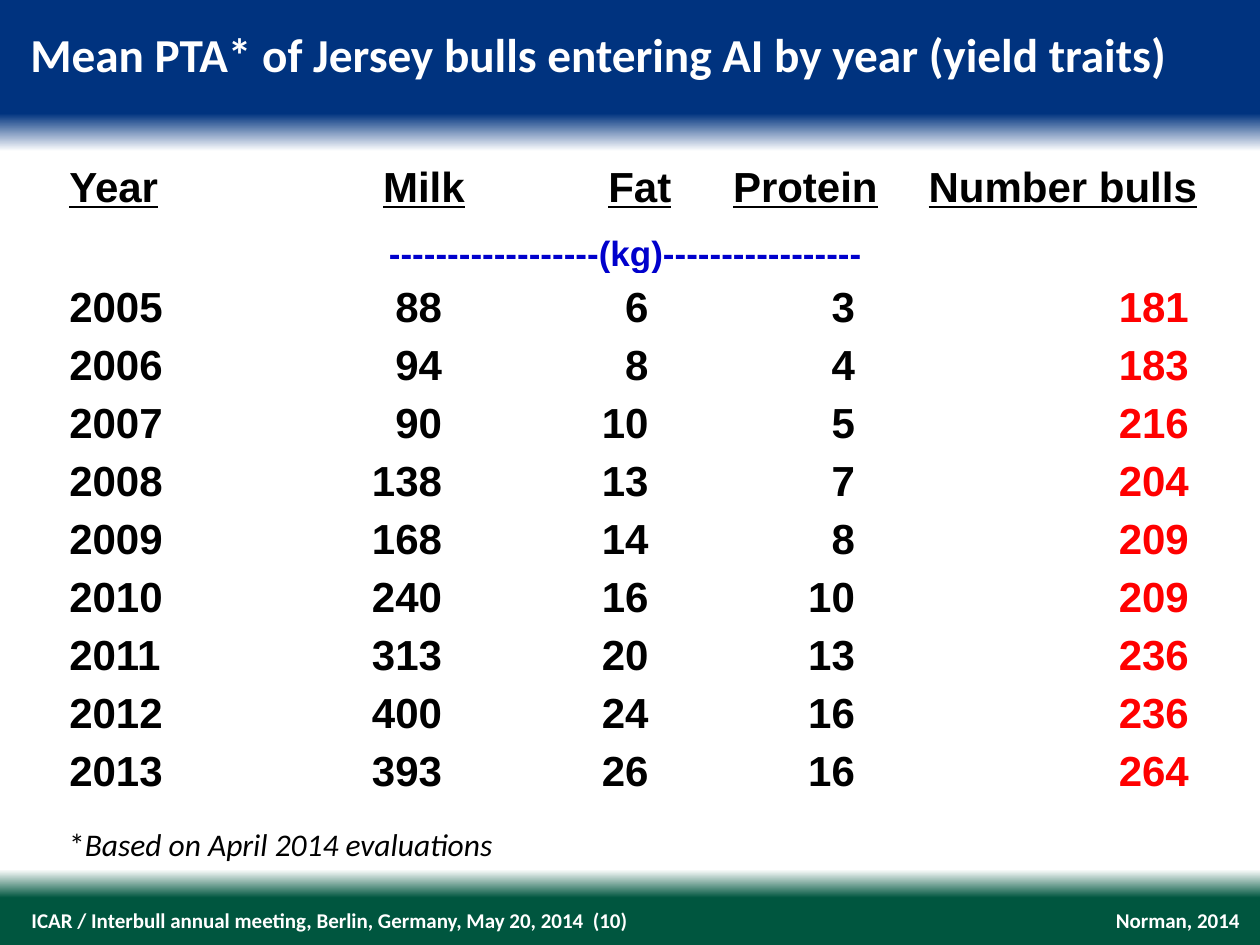
"""Build the slide on mean PTA of Jersey bulls entering AI by year."""

from dataclasses import dataclass

from lxml.etree import SubElement
from pptx import Presentation
from pptx.dml.color import RGBColor
from pptx.enum.text import MSO_ANCHOR, PP_ALIGN
from pptx.oxml.ns import qn
from pptx.slide import Slide
from pptx.table import Table
from pptx.text.text import TextFrame
from pptx.util import Pt

WHITE = RGBColor(0xFF, 0xFF, 0xFF)
BLACK = RGBColor(0, 0, 0)
RED = RGBColor(0xFF, 0, 0)
BLUE = RGBColor(0, 0, 0xCC)
NAVY = RGBColor(0, 0x33, 0x7F)
GREEN = RGBColor(0, 0x56, 0x3F)

BACKGROUND_STOPS = [
    (0, NAVY), (12, NAVY), (16, WHITE), (92, WHITE), (95, GREEN), (100, GREEN),
]
COLUMN_WIDTHS = [118, 118, 118, 118, 201.6]
ROW_HEIGHT = 33.12
HEADERS = ["Year", "Milk", "Fat", "Protein", "Number bulls"]
BULLS = [
    (2005, 88, 6, 3, 181),
    (2006, 94, 8, 4, 183),
    (2007, 90, 10, 5, 216),
    (2008, 138, 13, 7, 204),
    (2009, 168, 14, 8, 209),
    (2010, 240, 16, 10, 209),
    (2011, 313, 20, 13, 236),
    (2012, 400, 24, 16, 236),
    (2013, 393, 26, 16, 264),
]


@dataclass(frozen=True)
class TextStyle:
    size: float
    color: RGBColor = BLACK
    font: str = "Arial"
    bold: bool = True
    italic: bool = False
    underline: bool = False


@dataclass(frozen=True)
class CellStyle:
    text: TextStyle
    align: PP_ALIGN = PP_ALIGN.RIGHT
    anchor: MSO_ANCHOR = MSO_ANCHOR.BOTTOM
    left: float = 0.72
    right: float = 18
    top: float = 0.72
    spacing: float = 1.0


@dataclass(frozen=True)
class Label:
    left: float
    top: float
    width: float
    height: float
    runs: list[tuple[str, TextStyle]]
    align: PP_ALIGN = PP_ALIGN.LEFT
    anchor: MSO_ANCHOR = MSO_ANCHOR.TOP


TITLE = TextStyle(27, WHITE, "Calibri")
FOOTER = TextStyle(12, WHITE, "Calibri")
NOTE_MARK = TextStyle(18, font="Calibri", bold=False)
NOTE = TextStyle(18, font="Calibri", bold=False, italic=True)
HEADING = TextStyle(24, underline=True)
BODY = TextStyle(24)

HEADER_ALIGNS = [PP_ALIGN.LEFT] + [PP_ALIGN.RIGHT] * 3 + [PP_ALIGN.CENTER]
HEADER_CELLS = [
    CellStyle(HEADING, align, MSO_ANCHOR.TOP, 5, 5, 0, 1.15)
    for align in HEADER_ALIGNS
]
YEAR_CELL = CellStyle(BODY, PP_ALIGN.LEFT, left=5, right=5, top=0, spacing=1.15)
COUNT_CELL = CellStyle(TextStyle(24, RED), right=28.8)
BODY_CELLS = [YEAR_CELL] + [CellStyle(BODY)] * 3 + [COUNT_CELL]
UNIT_CELL = CellStyle(TextStyle(20, BLUE), PP_ALIGN.CENTER, left=56.3, right=0.72)

LABELS = [
    Label(636.5, 518.4, 72, 14.4, [("Norman, 2014", FOOTER)],
          PP_ALIGN.RIGHT, MSO_ANCHOR.MIDDLE),
    Label(18, 518.4, 376, 14.4,
          [("ICAR / Interbull annual meeting, Berlin, Germany, May 20, 2014  (10)",
            FOOTER)], anchor=MSO_ANCHOR.MIDDLE),
    Label(17.3, 14.4, 692.6, 32.4,
          [("Mean PTA* of Jersey bulls entering AI by year (yield traits)", TITLE)]),
    Label(39.5, 471.6, 281, 22,
          [("*", NOTE_MARK), ("Based on April 2014 evaluations", NOTE)]),
]


def paint_background(s: Slide) -> None:
    fill = s.background.fill
    fill.gradient()
    fill.gradient_angle = 270
    stops = s.background._cSld.find(".//" + qn("a:gsLst"))
    for stop in list(stops):
        stops.remove(stop)
    for position, color in BACKGROUND_STOPS:
        stop = SubElement(stops, qn("a:gs"), pos=str(position * 1000))
        SubElement(stop, qn("a:srgbClr"), val=str(color))


def write_runs(
    tf: TextFrame, runs: list[tuple[str, TextStyle]], align: PP_ALIGN
) -> None:
    p = tf.paragraphs[0]
    p.alignment = align
    for text, style in runs:
        r = p.add_run()
        r.text = text
        r.font.name = style.font
        r.font.size = Pt(style.size)
        r.font.bold = style.bold
        r.font.italic = style.italic
        r.font.underline = style.underline
        r.font.color.rgb = style.color


def add_label(s: Slide, label: Label) -> None:
    sp = s.shapes.add_textbox(
        Pt(label.left), Pt(label.top), Pt(label.width), Pt(label.height)
    )
    tf = sp.text_frame
    tf.word_wrap = True
    tf.vertical_anchor = label.anchor
    tf.margin_left = tf.margin_right = tf.margin_top = tf.margin_bottom = 0
    write_runs(tf, label.runs, label.align)


def write_cell(
    table: Table, row: int, column: int, text: str, style: CellStyle
) -> None:
    cell = table.cell(row, column)
    cell.vertical_anchor = style.anchor
    cell.margin_left, cell.margin_right = Pt(style.left), Pt(style.right)
    cell.margin_top, cell.margin_bottom = Pt(style.top), 0
    write_runs(cell.text_frame, [(text, style.text)], style.align)
    cell.text_frame.paragraphs[0].line_spacing = style.spacing


def add_bull_table(s: Slide) -> None:
    rows = len(BULLS) + 2
    table = s.shapes.add_table(
        rows, len(HEADERS), Pt(34.6), Pt(90),
        Pt(sum(COLUMN_WIDTHS)), Pt(rows * ROW_HEIGHT),
    ).table
    table.first_row = table.horz_banding = False
    for column, width in zip(table.columns, COLUMN_WIDTHS):
        column.width = Pt(width)
    for row in table.rows:
        row.height = Pt(ROW_HEIGHT)
    for cell in table.iter_cells():
        cell.fill.background()
    for column, (text, style) in enumerate(zip(HEADERS, HEADER_CELLS)):
        write_cell(table, 0, column, text, style)
    table.cell(1, 1).merge(table.cell(1, 3))
    write_cell(table, 1, 1, "-" * 18 + "(kg)" + "-" * 17, UNIT_CELL)
    for row, values in enumerate(BULLS, start=2):
        for column, (value, style) in enumerate(zip(values, BODY_CELLS)):
            write_cell(table, row, column, str(value), style)


def main() -> None:
    prs = Presentation()
    prs.slide_width, prs.slide_height = Pt(720), Pt(540)
    s = prs.slides.add_slide(prs.slide_layouts[6])
    paint_background(s)
    for label in LABELS:
        add_label(s, label)
    add_bull_table(s)
    prs.save("out.pptx")


if __name__ == "__main__":
    main()
